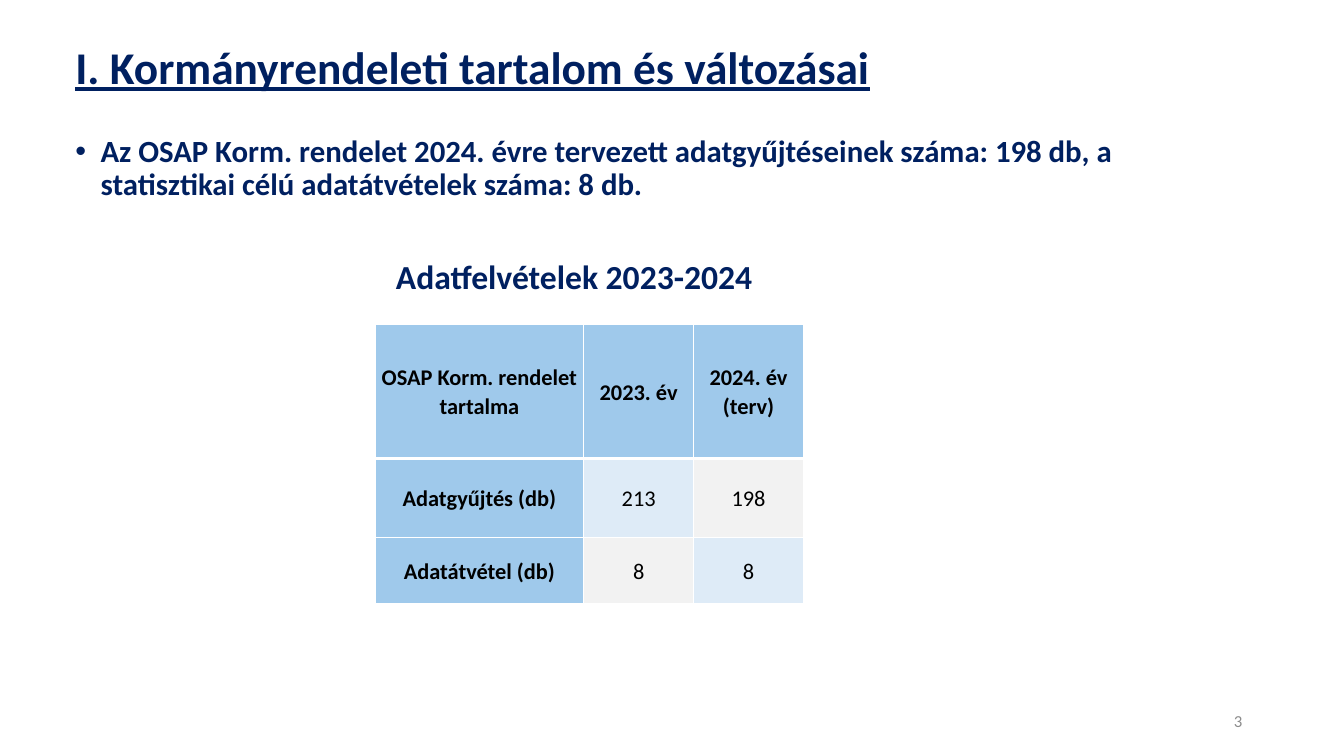
import dataclasses

import lxml.etree
import pptx
import pptx.dml.color
import pptx.enum.text
import pptx.oxml.ns
import pptx.util

ALIGN = pptx.enum.text.PP_ALIGN
ANCHOR = pptx.enum.text.MSO_ANCHOR
SCALE = 9144


@dataclasses.dataclass(frozen=True)
class Theme:
    font: str = "Calibri"
    navy: str = "002060"
    black: str = "000000"
    gray: str = "8C8C8C"
    white: str = "FFFFFF"
    header: str = "9FC9EB"
    pale_blue: str = "DEEBF7"
    pale_gray: str = "F2F2F2"
    title: float = 32.4
    caption: int = 24
    body: int = 22
    cell: int = 16
    number: int = 12


THEME = Theme()

ROWS = [
    ["OSAP Korm. rendelet tartalma", "2023. év", "2024. év (terv)"],
    ["Adatgyűjtés (db)", "213", "198"],
    ["Adatátvétel (db)", "8", "8"],
]
COL_WIDTHS = [207, 109, 109]
ROW_HEIGHTS = [133, 78, 66]


def px(n):
    return pptx.util.Emu(n * SCALE)


def rgb(color):
    return pptx.dml.color.RGBColor.from_string(color)


def add_xml(parent, tag, **attrs):
    el = lxml.etree.SubElement(parent, pptx.oxml.ns.qn(tag))
    for key, value in attrs.items():
        el.set(key, str(value))
    return el


def write(tf, text, size, color=THEME.navy, bold=True, underline=False,
          align=ALIGN.LEFT, anchor=ANCHOR.TOP, spacing=1.0, indent=0):
    tf.word_wrap = True
    tf.vertical_anchor = anchor
    p = tf.paragraphs[0]
    p.alignment = align
    p.line_spacing = spacing
    if indent:
        pPr = p._p.get_or_add_pPr()
        pPr.set("marL", str(px(indent)))
        pPr.set("indent", str(-px(indent)))
        add_xml(pPr, "a:buFont", typeface="Arial")
        add_xml(pPr, "a:buChar", char="•")
    r = p.add_run()
    r.text = text
    r.font.name = THEME.font
    r.font.size = pptx.util.Pt(size)
    r.font.bold = bold
    r.font.underline = underline
    r.font.color.rgb = rgb(color)


def add_text(s, box, text, size, **fmt):
    sp = s.shapes.add_textbox(*map(px, box))
    write(sp.text_frame, text, size, **fmt)


def add_borders(cell, bottom):
    tcPr = cell._tc.get_or_add_tcPr()
    for side in "LRTB":
        width = bottom if side == "B" else 1
        ln = add_xml(tcPr, f"a:ln{side}", w=pptx.util.Pt(width))
        add_xml(add_xml(ln, "a:solidFill"), "a:srgbClr", val=THEME.white)


def cell_fill(row, col):
    if row == 0 or col == 0:
        return THEME.header
    return THEME.pale_gray if (row + col) % 2 else THEME.pale_blue


def add_heading(s, left, top, width):
    add_text(s, (left, top, width, 75), "I. Kormányrendeleti tartalom és változásai",
             THEME.title, underline=True, anchor=ANCHOR.MIDDLE, spacing=0.9)


def add_summary(s, left, top, width):
    add_text(s, (left, top, width, 165),
             "Az OSAP Korm. rendelet 2024. évre tervezett adatgyűjtéseinek száma: "
             "198 db, a statisztikai célú adatátvételek száma: 8 db.",
             THEME.body, spacing=0.9, indent=25)


def add_survey_table(s, left, top):
    add_text(s, (left, top, 395, 50), "Adatfelvételek 2023-2024",
             THEME.caption, align=ALIGN.CENTER)
    frame = s.shapes.add_table(len(ROWS), len(COL_WIDTHS), px(left), px(top + 73),
                               px(sum(COL_WIDTHS)), px(sum(ROW_HEIGHTS)))
    table = frame.table
    for column, width in zip(table.columns, COL_WIDTHS):
        column.width = px(width)
    for row, height in zip(table.rows, ROW_HEIGHTS):
        row.height = px(height)
    for i, values in enumerate(ROWS):
        for j, value in enumerate(values):
            cell = table.cell(i, j)
            add_borders(cell, bottom=1 if i else 3)
            cell.fill.solid()
            cell.fill.fore_color.rgb = rgb(cell_fill(i, j))
            cell.margin_left = cell.margin_right = px(5)
            cell.margin_top = cell.margin_bottom = 0
            write(cell.text_frame, value, THEME.cell, color=THEME.black,
                  bold=i == 0 or j == 0, align=ALIGN.CENTER, spacing=1.07)
            cell.vertical_anchor = ANCHOR.MIDDLE


def add_slide_number(s, left, top):
    add_text(s, (left, top, 300, 40), "3", THEME.number, color=THEME.gray,
             bold=False, align=ALIGN.RIGHT, anchor=ANCHOR.MIDDLE)


def main():
    prs = pptx.Presentation()
    prs.slide_width, prs.slide_height = px(1333), px(750)
    s = prs.slides.add_slide(prs.slide_layouts[6])
    add_heading(s, 65, 32, 1177)
    add_summary(s, 65, 130, 1177)
    add_survey_table(s, 372, 249)
    add_slide_number(s, 942, 695)
    prs.save("out.pptx")


if __name__ == "__main__":
    main()
